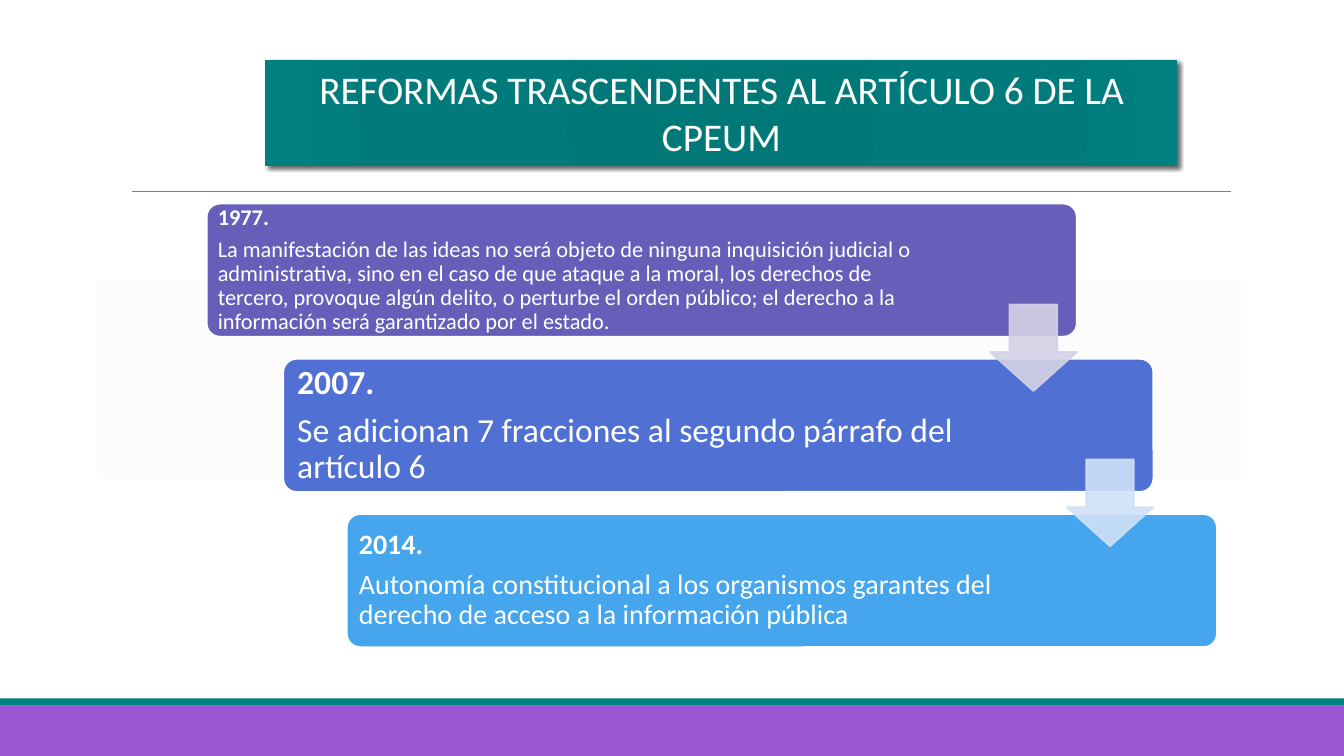
from pptx import Presentation
from pptx.dml.color import RGBColor
from pptx.enum.shapes import MSO_CONNECTOR, MSO_SHAPE
from pptx.enum.text import MSO_ANCHOR, PP_ALIGN
from pptx.oxml import parse_xml
from pptx.oxml.ns import nsdecls, qn
from pptx.util import Inches, Pt
from lxml import etree

COLORS = {
    "white": "FFFFFF", "purple": "9B57D3", "teal": "008080", "rule": "808080",
    "band": "F2F2F2", "violet": "665EB8", "blue": "5070D4", "sky": "45A5ED",
    "lilac": "D3D2E6", "ice": "CFE1F8", "black": "000000",
}
TEAL_STOPS = [(0, "007777"), (34, "007878"), (70, "007A7A"), (100, "008080")]

# Year, text, colour, font size, left, text width, inset
REFORMS = [
    ("1977.", "La manifestación de las ideas no será objeto de ninguna inquisición "
     "judicial o administrativa, sino en el caso de que ataque a la moral, los "
     "derechos de tercero, provoque algún delito, o perturbe el orden público; el "
     "derecho a la información será garantizado por el estado.",
     "violet", 16, 2.05, 7.21, 0.07),
    ("2007.", "Se adicionan 7 fracciones al segundo párrafo del artículo 6",
     "blue", 24, 2.81, 6.93, 0.1),
    ("2014.", "Autonomía constitucional a los organismos garantes del derecho de "
     "acceso a la información pública", "sky", 20, 3.44, 6.93, 0.08),
]
TOP, STEP, WIDTH, HEIGHT = 2.02, 1.54, 8.63, 1.32
PAD, ARROW = 0.04, 0.86


class Deck:
    def __init__(self, slide, font="Calibri"):
        self.slide = slide
        self.font = font

    def color(self, name):
        return RGBColor.from_string(COLORS[name])

    def shape(self, kind, box, fill, line=None, width=1.25, alpha=None, adjust=()):
        item = self.slide.shapes.add_shape(kind, *map(Inches, box))
        item.shadow.inherit = False
        for i, value in enumerate(adjust):
            item.adjustments[i] = value
        item.fill.solid()
        item.fill.fore_color.rgb = self.color(fill)
        if line:
            item.line.color.rgb = self.color(line)
            item.line.width = Pt(width)
        else:
            item.line.fill.background()
        if alpha:
            for tint in item._element.spPr.iter(qn("a:srgbClr")):
                etree.SubElement(tint, qn("a:alpha")).set("val", str(alpha * 1000))
        return item

    def rule(self, start, end, color, width):
        item = self.slide.shapes.add_connector(
            MSO_CONNECTOR.STRAIGHT, *map(Inches, start + end))
        item.line.color.rgb = self.color(color)
        item.line.width = Pt(width)
        etree.SubElement(item._element.spPr, qn("a:effectLst"))

    def style(self, para, size, bold=False):
        for run in para.runs:
            run.font.name = self.font
            run.font.size = Pt(size)
            run.font.bold = bold
            run.font.color.rgb = self.color("white")

    def text(self, box, lines, size, inset):
        frame = self.slide.shapes.add_textbox(*map(Inches, box)).text_frame
        frame.word_wrap = True
        frame.vertical_anchor = MSO_ANCHOR.MIDDLE
        frame.margin_left = frame.margin_right = Inches(inset)
        frame.margin_top = frame.margin_bottom = Inches(inset)
        frame.text = "\n".join(lines)
        for i, para in enumerate(frame.paragraphs):
            para.line_spacing = 0.9
            para.space_after = Pt(0.35 * size)
            self.style(para, size, bold=i == 0)

    def title(self, box, words):
        item = self.shape(MSO_SHAPE.RECTANGLE, box, "teal", "teal", 1)
        # Round gradient and soft shadow
        stops = "".join(f'<a:gs pos="{pos * 1000}"><a:srgbClr val="{tint}"/></a:gs>'
                        for pos, tint in TEAL_STOPS)
        grad = parse_xml(
            f'<a:gradFill {nsdecls("a")} rotWithShape="1"><a:gsLst>{stops}</a:gsLst>'
            '<a:path path="circle"><a:fillToRect l="100000" t="100000" '
            'r="100000" b="100000"/></a:path></a:gradFill>')
        props = item._element.spPr
        props.replace(props.find(qn("a:solidFill")), grad)
        props.find(qn("a:effectLst")).append(parse_xml(
            f'<a:outerShdw {nsdecls("a")} blurRad="{Pt(3)}" dist="{Pt(2)}" '
            f'dir="2700000" rotWithShape="0"><a:srgbClr val="{COLORS["black"]}">'
            '<a:alpha val="60000"/></a:srgbClr></a:outerShdw>'))
        frame = item.text_frame
        frame.word_wrap = True
        frame.vertical_anchor = MSO_ANCHOR.TOP
        frame.text = words
        frame.paragraphs[0].alignment = PP_ALIGN.CENTER
        self.style(frame.paragraphs[0], 28)


def main():
    prs = Presentation()
    prs.slide_width, prs.slide_height = Inches(13.33), Inches(7.5)
    deck = Deck(prs.slides.add_slide(prs.slide_layouts[6]))

    # Footer, rule and pale band
    deck.shape(MSO_SHAPE.RECTANGLE, (0, 7, 13.33, 0.5), "purple")
    deck.shape(MSO_SHAPE.RECTANGLE, (0, 6.93, 13.33, 0.07), "teal")
    deck.rule((1.31, 1.9), (12.21, 1.9), "rule", 0.5)
    deck.shape(MSO_SHAPE.RECTANGLE, (0.96, 2.78, 11.35, 1.97), "band", alpha=18)

    # Reform steps
    for i, (year, words, color, size, left, wide, inset) in enumerate(REFORMS):
        top = TOP + i * STEP
        deck.shape(MSO_SHAPE.ROUNDED_RECTANGLE, (left, top, WIDTH, HEIGHT),
                   color, "white", adjust=(0.1,))
        deck.text((left + PAD, top + PAD, wide, HEIGHT - 2 * PAD),
                  (year, words), size, inset)

    # Arrows between steps
    for i, color in enumerate(("lilac", "ice")):
        left = REFORMS[i][4] + WIDTH - ARROW
        deck.shape(MSO_SHAPE.DOWN_ARROW, (left, TOP + 1 + i * STEP, ARROW, ARROW),
                   color, color, alpha=90, adjust=(0.55, 0.45))

    # Title
    deck.title((2.64, 0.6, 9.03, 1.04),
               "REFORMAS TRASCENDENTES AL ARTÍCULO 6 DE LA CPEUM")
    prs.save("out.pptx")


if __name__ == "__main__":
    main()
